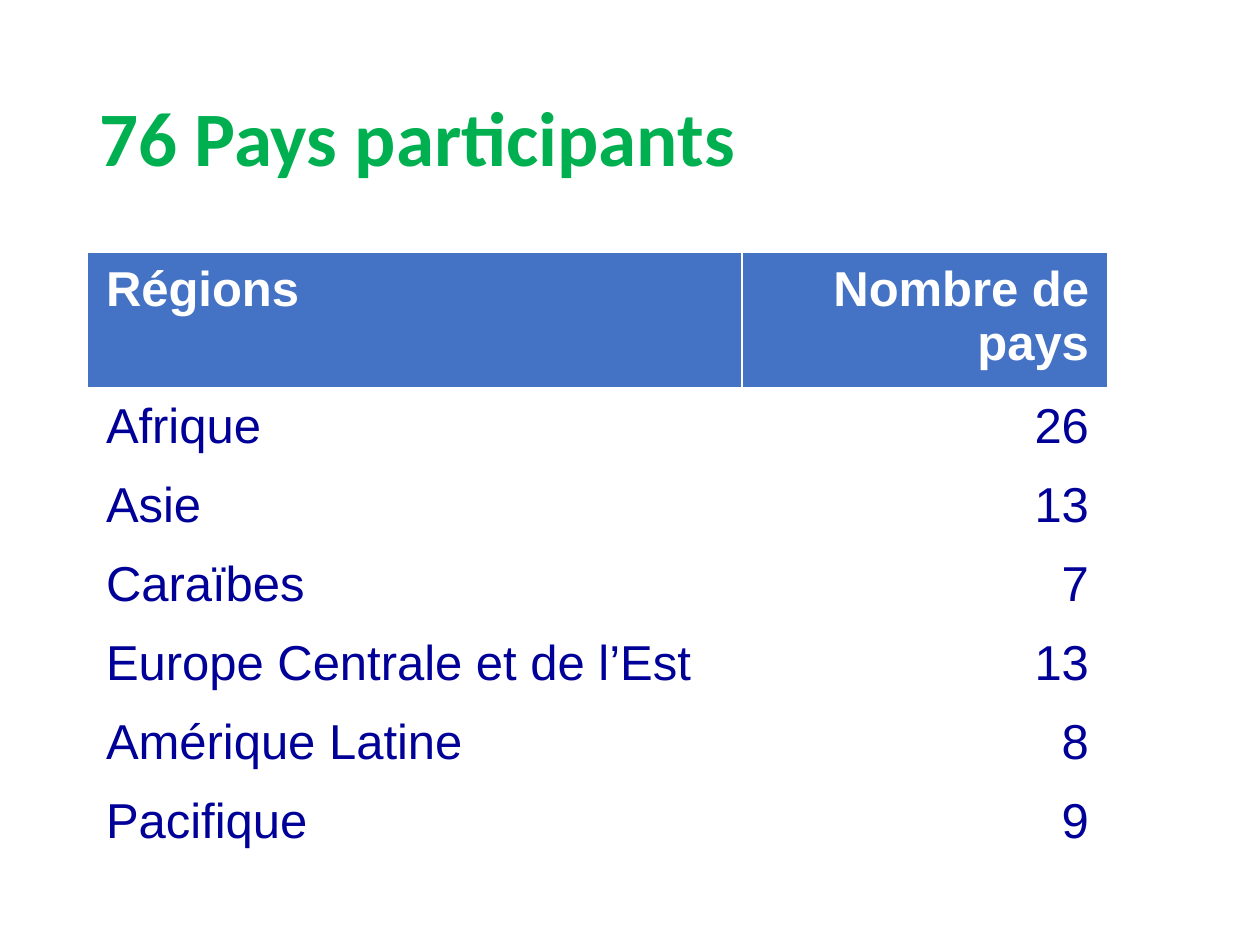
"""Build a slide with a table of participating countries by region."""
from lxml import etree
from pptx import Presentation
from pptx.dml.color import RGBColor
from pptx.enum.text import MSO_ANCHOR, PP_ALIGN
from pptx.oxml.ns import qn
from pptx.util import Pt

TITLE = "76 Pays participants"
ROWS = [
    ("Régions", "Nombre de pays"),
    ("Afrique", "26"),
    ("Asie", "13"),
    ("Caraïbes", "7"),
    ("Europe Centrale et de l’Est", "13"),
    ("Amérique Latine", "8"),
    ("Pacifique", "9"),
]

PX = 914400 // 126
WIDTH, HEIGHT = 1260, 945
LEFT = 87
TITLE_TOP, TITLE_WIDTH, TITLE_HEIGHT = 50, 893, 183
TABLE_TOP = 252
COLUMN_WIDTHS = (655, 366)
HEADER_HEIGHT, ROW_HEIGHT = 126, 79
INSET_X, INSET_Y = 19, 10

GREEN = RGBColor(0x00, 0xB0, 0x50)
BLUE = RGBColor(0x44, 0x72, 0xC4)
NAVY = RGBColor(0x00, 0x00, 0x99)
WHITE = RGBColor(0xFF, 0xFF, 0xFF)
MIDDLE = MSO_ANCHOR.MIDDLE
ALIGNMENTS = (PP_ALIGN.LEFT, PP_ALIGN.RIGHT)


def set_font(para, name, size, color, bold):
    font = para.font
    font.name, font.size, font.bold = name, Pt(size), bold
    font.color.rgb = color


def set_borders(cell, top, bottom):
    properties = cell._tc.get_or_add_tcPr()
    sides = (("a:lnL", 1), ("a:lnR", 1), ("a:lnT", top), ("a:lnB", bottom))
    for index, (tag, points) in enumerate(sides):
        line = etree.Element(qn(tag), w=str(Pt(points)))
        fill = etree.SubElement(line, qn("a:solidFill"))
        etree.SubElement(fill, qn("a:srgbClr"), val=str(WHITE))
        properties.insert(index, line)


def add_title(slide):
    box = slide.shapes.add_textbox(
        LEFT * PX, TITLE_TOP * PX, TITLE_WIDTH * PX, TITLE_HEIGHT * PX)
    frame = box.text_frame
    frame.word_wrap = True
    frame.vertical_anchor = MIDDLE
    para = frame.paragraphs[0]
    para.text = TITLE
    para.line_spacing = 0.9
    set_font(para, "Calibri", 44, GREEN, True)


def fill_cell(cell, text, row, column):
    header = row == 0
    cell.text = text
    cell.margin_left = cell.margin_right = INSET_X * PX
    cell.margin_top = cell.margin_bottom = INSET_Y * PX
    para = cell.text_frame.paragraphs[0]
    para.alignment = ALIGNMENTS[column]
    set_font(para, "Arial", 28, WHITE if header else NAVY, header)
    if header:
        cell.fill.solid()
        cell.fill.fore_color.rgb = BLUE
    else:
        cell.fill.background()
    set_borders(cell, 3 if row == 1 else 1, 3 if header else 1)


def add_regions(slide):
    heights = [HEADER_HEIGHT] + [ROW_HEIGHT] * (len(ROWS) - 1)
    table = slide.shapes.add_table(
        len(ROWS), len(COLUMN_WIDTHS), LEFT * PX, TABLE_TOP * PX,
        sum(COLUMN_WIDTHS) * PX, sum(heights) * PX).table
    table.horz_banding = False
    for column, width in zip(table.columns, COLUMN_WIDTHS):
        column.width = width * PX
    for row, (texts, height) in enumerate(zip(ROWS, heights)):
        table.rows[row].height = height * PX
        for column, text in enumerate(texts):
            fill_cell(table.cell(row, column), text, row, column)


def main():
    deck = Presentation()
    deck.slide_width, deck.slide_height = WIDTH * PX, HEIGHT * PX
    slide = deck.slides.add_slide(deck.slide_layouts[6])
    add_title(slide)
    add_regions(slide)
    deck.save("out.pptx")


if __name__ == "__main__":
    main()
